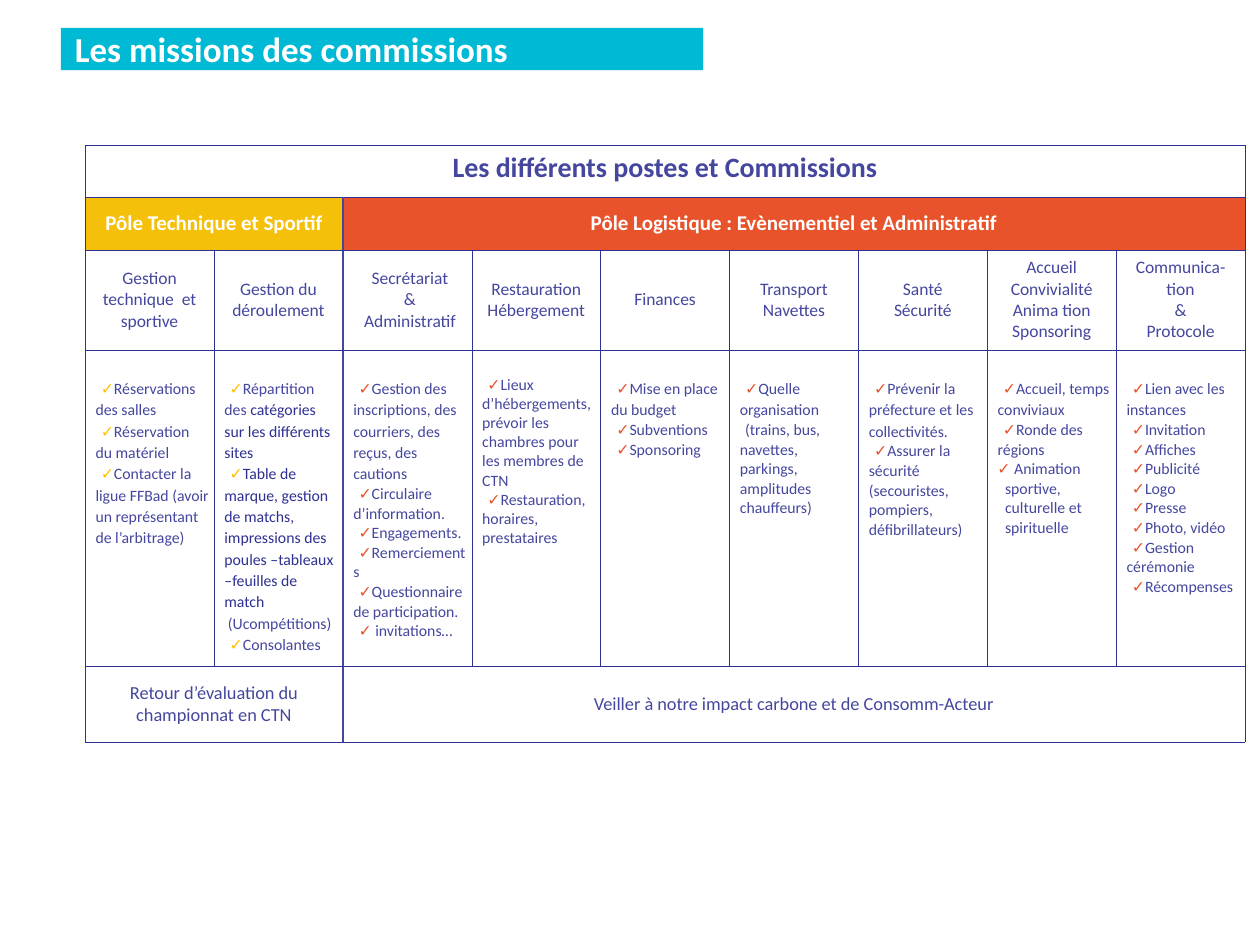
from dataclasses import dataclass

from lxml import etree
from pptx import Presentation
from pptx.dml.color import RGBColor
from pptx.enum.shapes import MSO_SHAPE
from pptx.enum.text import MSO_ANCHOR, PP_ALIGN
from pptx.oxml.ns import qn
from pptx.util import Pt

RECTANGLE = MSO_SHAPE.RECTANGLE
TOP, MIDDLE = MSO_ANCHOR.TOP, MSO_ANCHOR.MIDDLE
LEFT, CENTER = PP_ALIGN.LEFT, PP_ALIGN.CENTER

FONT = "Calibri"
COLORS = {
    "banner": "00BAD5", "white": "FFFFFF", "text": "45479E", "dark": "2E3092",
    "technical": "F4C009", "logistics": "E8532B", "technical_tick": "FFC000",
}


@dataclass
class Task:
    text: str
    dark: str = ""
    ticked: bool = True
    left: float = 3
    first: float = 3


@dataclass
class Commission:
    """The first `wide` tasks have the wider line pitch, the others `pitch`."""
    name: list
    tasks: list
    wide: int = 1
    pitch: float | None = 11.2
    top: float = 15.8


TITLE = "Les missions des commissions"
HEADING = "Les différents postes et Commissions"
# first column, column count, name, closing line, fill
POLES = [
    (0, 2, "Pôle Technique et Sportif",
     "Retour d’évaluation du championnat en CTN", "technical"),
    (2, 7, "Pôle Logistique : Evènementiel et Administratif",
     "Veiller à notre impact carbone et de Consomm-Acteur", "logistics"),
]
COMMISSIONS = [
    Commission(["Gestion technique  et sportive"], [
        Task("Réservations des salles"),
        Task("Réservation du matériel"),
        Task("Contacter la ligue FFBad (avoir un représentant de l’arbitrage)"),
    ], wide=3),
    Commission(["Gestion du déroulement"], [
        Task("Répartition des ", dark="catégories sur les différents sites"),
        Task("", dark="Table de marque, gestion de matchs, impressions des "
                      "poules –tableaux –feuilles de match"),
        Task("(Ucompétitions)", ticked=False, first=2),
        Task("Consolantes"),
    ], wide=4),
    Commission(["Secrétariat", "&", "Administratif"], [
        Task("Gestion des inscriptions, des courriers, des reçus, des cautions"),
        Task("Circulaire d’information."),
        Task("Engagements."),
        Task("Remerciements"),
        Task("Questionnaire de participation."),
        Task(" invitations…"),
    ]),
    Commission(["Restauration Hébergement"], [
        Task("Lieux d’hébergements, prévoir les chambres pour les membres de CTN"),
        Task("Restauration, horaires, prestataires"),
    ], wide=0, pitch=None, top=14.6),
    Commission(["Finances"], [
        Task("Mise en place du budget"), Task("Subventions"), Task("Sponsoring"),
    ]),
    Commission(["Transport Navettes"], [
        Task("Quelle organisation"),
        Task("(trains, bus, navettes, parkings, amplitudes chauffeurs)", ticked=False),
    ]),
    Commission(["Santé", "Sécurité"], [
        Task("Prévenir la"),
        Task("préfecture et les collectivités.", ticked=False, first=0),
        Task("Assurer la sécurité (secouristes, pompiers, défibrillateurs)"),
    ], wide=2),
    Commission(["Accueil Convivialité", "Anima tion", "Sponsoring"], [
        Task("Accueil, temps conviviaux"),
        Task("Ronde des régions"),
        Task(" Animation sportive, culturelle et spirituelle", left=7.2, first=-4.3),
    ]),
    Commission(["Communica-tion", "&", "Protocole"], [
        Task("Lien avec les instances"), Task("Invitation"), Task("Affiches"),
        Task("Publicité"), Task("Logo"), Task("Presse"), Task("Photo, vidéo"),
        Task("Gestion cérémonie"), Task("Récompenses"),
    ]),
]
COLUMN_WIDTH = 73.66
ROW_HEIGHTS = [29.9, 30.1, 57.2, 181, 43]
WIDE_PITCH = 12.2
NARROW_MARGIN = 3
POLE_BORDER = POLES[1][0]


def rgb(color):
    return RGBColor.from_string(COLORS[color])


def style(paragraph, size, color="text", bold=False, align=CENTER):
    paragraph.alignment = align
    font = paragraph.font
    font.name, font.size, font.bold = FONT, Pt(size), bold
    font.color.rgb = rgb(color)


def indent(paragraph, left, first):
    properties = paragraph._p.get_or_add_pPr()
    properties.set("marL", str(Pt(left)))
    properties.set("indent", str(Pt(first)))
    return properties


def add_tick(properties, color):
    tick_color = etree.SubElement(properties, qn("a:buClr"))
    etree.SubElement(tick_color, qn("a:srgbClr"), val=COLORS[color])
    etree.SubElement(properties, qn("a:buFont"), typeface=FONT)
    etree.SubElement(properties, qn("a:buChar"), char="✓")


def next_paragraph(frame, index):
    return frame.add_paragraph() if index else frame.paragraphs[0]


def write_lines(cell, lines, size, color="text", bold=False, anchor=MIDDLE):
    cell.vertical_anchor = anchor
    for index, line in enumerate(lines):
        paragraph = next_paragraph(cell.text_frame, index)
        paragraph.text = line
        style(paragraph, size, color, bold)


def write_tasks(cell, commission, tick_color):
    cell.vertical_anchor = TOP
    cell.margin_left = cell.margin_right = Pt(NARROW_MARGIN)
    cell.margin_top = Pt(commission.top)
    for index, task in enumerate(commission.tasks):
        paragraph = next_paragraph(cell.text_frame, index)
        properties = indent(paragraph, task.left, task.first)
        if task.ticked:
            add_tick(properties, tick_color)
        pitch = WIDE_PITCH if index < commission.wide else commission.pitch
        if pitch:
            paragraph.line_spacing = Pt(pitch)
        style(paragraph, 9, align=LEFT)
        if task.text:
            paragraph.add_run().text = task.text
        if task.dark:
            run = paragraph.add_run()
            run.text = task.dark
            run.font.color.rgb = rgb("dark")


def set_borders(cell, strong_sides):
    properties = cell._tc.get_or_add_tcPr()
    for position, side in enumerate("LRTB"):
        color, width = ("text", 1) if side in strong_sides else ("dark", 0.25)
        line = etree.Element(qn(f"a:ln{side}"), w=str(Pt(width)))
        fill = etree.SubElement(line, qn("a:solidFill"))
        etree.SubElement(fill, qn("a:srgbClr"), val=COLORS[color])
        etree.SubElement(line, qn("a:prstDash"), val="solid")
        properties.insert(position, line)


def add_banner(slide):
    banner = slide.shapes.add_shape(RECTANGLE, Pt(34.8), Pt(16), Pt(367), Pt(24.2))
    banner.shadow.inherit = False
    banner.fill.solid()
    banner.fill.fore_color.rgb = rgb("banner")
    banner.line.fill.background()
    frame = banner.text_frame
    frame.margin_left = frame.margin_right = frame.margin_top = frame.margin_bottom = 0
    frame.vertical_anchor = TOP
    frame.word_wrap = True
    paragraph = frame.paragraphs[0]
    paragraph.text = TITLE
    indent(paragraph, 7.9, 0)
    style(paragraph, 20, "white", bold=True, align=LEFT)


def add_commission_table(slide):
    count = len(COMMISSIONS)
    table = slide.shapes.add_table(
        len(ROW_HEIGHTS), count, Pt(48.6), Pt(82.8),
        Pt(COLUMN_WIDTH * count), Pt(sum(ROW_HEIGHTS))).table
    table.first_row = table.horz_banding = False
    for column in table.columns:
        column.width = Pt(COLUMN_WIDTH)
    for row, height in zip(table.rows, ROW_HEIGHTS):
        row.height = Pt(height)
    for cell in table.iter_cells():
        cell.fill.background()

    table.cell(0, 0).merge(table.cell(0, count - 1))
    write_lines(table.cell(0, 0), [HEADING], 16, bold=True, anchor=TOP)
    for start, span, name, closing, color in POLES:
        for row in (1, 4):
            table.cell(row, start).merge(table.cell(row, start + span - 1))
        pole = table.cell(1, start)
        pole.fill.solid()
        pole.fill.fore_color.rgb = rgb(color)
        write_lines(pole, [name], 12, "white", bold=True)
        write_lines(table.cell(4, start), [closing], 10.5)
    for column, commission in enumerate(COMMISSIONS):
        write_lines(table.cell(2, column), commission.name, 10)
        tick_color = "technical_tick" if column < POLE_BORDER else "logistics"
        write_tasks(table.cell(3, column), commission, tick_color)
    secretariat = table.cell(2, POLE_BORDER)
    secretariat.margin_left = secretariat.margin_right = Pt(NARROW_MARGIN)
    for paragraph in secretariat.text_frame.paragraphs:
        indent(paragraph, 20.3, -17.3)

    for row in range(len(ROW_HEIGHTS)):
        for column in range(count):
            cell = table.cell(row, column)
            end = column + (cell.span_width if cell.is_merge_origin else 1)
            strong_sides = ""
            if row and column == POLE_BORDER:
                strong_sides = "L"
            elif row and end == POLE_BORDER:
                strong_sides = "R"
            set_borders(cell, strong_sides)


presentation = Presentation()
presentation.slide_width, presentation.slide_height = Pt(720), Pt(540)
missions = presentation.slides.add_slide(presentation.slide_layouts[6])
add_banner(missions)
add_commission_table(missions)
presentation.save("out.pptx")
